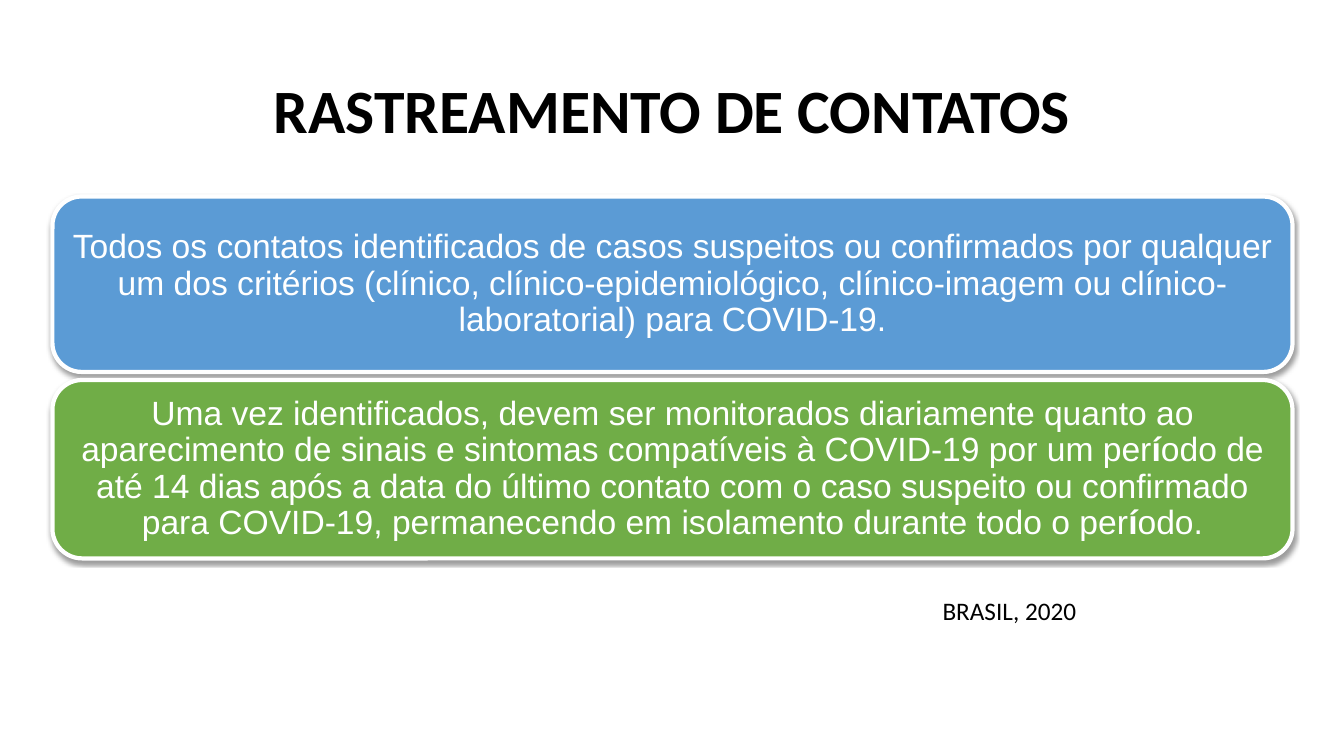
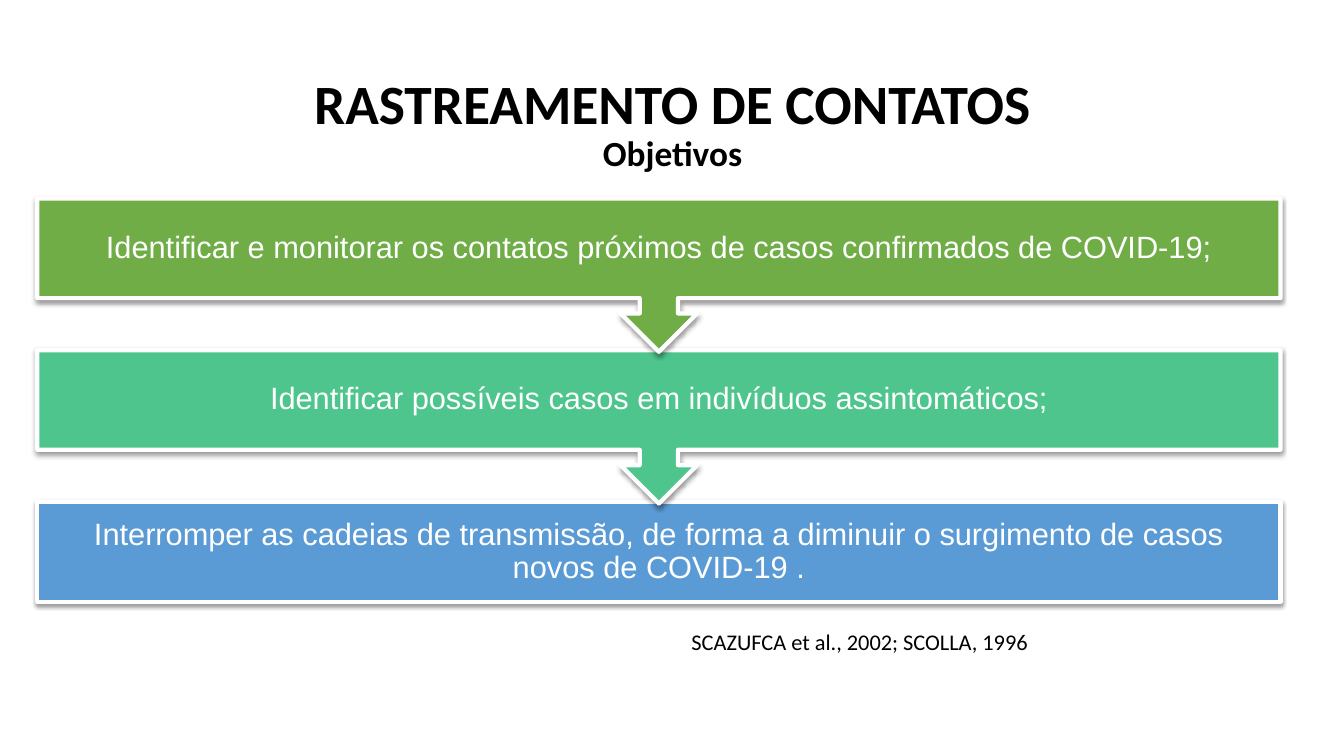
import pptx
import pptx.dml.color
import pptx.enum.shapes
import pptx.enum.text
import pptx.oxml
import pptx.oxml.ns
import pptx.util

Inches, Pt = pptx.util.Inches, pptx.util.Pt
SHAPE = pptx.enum.shapes.MSO_SHAPE
ALIGN = pptx.enum.text.PP_ALIGN
MIDDLE = pptx.enum.text.MSO_ANCHOR.MIDDLE

COLORS = {"black": "000000", "white": "FFFFFF", "blue": "5B9BD5",
          "green": "70AD47", "teal": "4DC58D"}
TITLE_FONT, BLOCK_FONT = "Calibri", "Arial"
LINE_SPACING = 0.9
HEADING = "RASTREAMENTO DE CONTATOS"

# A block's text is a list of (text, bold) runs.
CONTACT_BLOCKS = [
    ("blue", 1.95, 1.74, [
        ("Todos os contatos identificados de casos suspeitos ou confirmados por "
         "qualquer um dos critérios (clínico, clínico-epidemiológico, "
         "clínico-imagem ou clínico-laboratorial) para COVID-19.", False)]),
    ("green", 3.77, 1.77, [
        ("Uma vez identificados, devem ser monitorados diariamente quanto ao "
         "aparecimento de sinais e sintomas compatíveis à COVID-19 por um per", False),
        ("í", True),
        ("odo de até 14 dias após a data do último contato com o caso suspeito ou "
         "confirmado para COVID-19, permanecendo em isolamento durante todo o per", False),
        ("í", True),
        ("odo.", False)]),
]
OBJECTIVES = [
    ("green", "Identificar e monitorar os contatos próximos de casos confirmados de COVID-19;"),
    ("teal", "Identificar possíveis casos em indivíduos assintomáticos;"),
    ("blue", "Interromper as cadeias de transmissão, de forma a diminuir o surgimento "
             "de casos novos de COVID-19 ."),
]
OBJECTIVES_TOP, OBJECTIVES_PITCH = 1.97, 1.505
CALLOUT_HEIGHT, LAST_HEIGHT = 1.52, 0.99

SHADOW = (
    f'<a:outerShdw {pptx.oxml.ns.nsdecls("a")} blurRad="40000" dist="20000" '
    'dir="5400000" rotWithShape="0"><a:srgbClr val="000000">'
    '<a:alpha val="38000"/></a:srgbClr></a:outerShdw>')


def rgb(name):
    return pptx.dml.color.RGBColor.from_string(COLORS[name])


def set_font(paragraph, name, size, color):
    paragraph.font.name = name
    paragraph.font.size = Pt(size)
    paragraph.font.color.rgb = rgb(color)


def add_slide(presentation, top, lines):
    """Add a slide whose title holds the given (text, size) lines."""
    slide = presentation.slides.add_slide(presentation.slide_layouts[5])
    title = slide.shapes.title
    title.left, title.top = Inches(0.92), Inches(top)
    title.width, title.height = Inches(11.5), Inches(1.45)
    frame = title.text_frame
    frame.auto_size = pptx.enum.text.MSO_AUTO_SIZE.NONE
    frame.vertical_anchor = MIDDLE
    frame.text = "\n".join(text for text, _ in lines)
    for paragraph, (_, size) in zip(frame.paragraphs, lines):
        paragraph.alignment = ALIGN.CENTER
        paragraph.line_spacing = LINE_SPACING
        set_font(paragraph, TITLE_FONT, size, "black")
        paragraph.font.bold = True
    return slide


def add_block(slide, kind, box, color, runs, size, inset):
    """Add a filled, white-edged shape with a soft shadow and centred text."""
    shape = slide.shapes.add_shape(kind, *map(Inches, box))
    shape.fill.solid()
    shape.fill.fore_color.rgb = rgb(color)
    shape.line.color.rgb = rgb("white")
    shape.line.width = Pt(3)
    shape.shadow.inherit = False
    effects = shape.element.spPr.find(pptx.oxml.ns.qn("a:effectLst"))
    effects.append(pptx.oxml.parse_xml(SHADOW))
    frame = shape.text_frame
    frame.word_wrap = True
    frame.vertical_anchor = MIDDLE
    frame.margin_left = frame.margin_right = Inches(inset)
    frame.margin_top = frame.margin_bottom = Inches(inset)
    paragraph = frame.paragraphs[0]
    paragraph.alignment = ALIGN.CENTER
    paragraph.line_spacing = LINE_SPACING
    set_font(paragraph, BLOCK_FONT, size, "white")
    for text, bold in runs:
        run = paragraph.add_run()
        run.text = text
        if bold:
            run.font.bold = True


def add_citation(slide, box, text, size):
    frame = slide.shapes.add_textbox(*map(Inches, box)).text_frame
    frame.word_wrap = True
    frame.text = text
    set_font(frame.paragraphs[0], TITLE_FONT, size, "black")


def build_contacts(presentation):
    slide = add_slide(presentation, 0.4, [(HEADING, 44)])
    for color, top, height, runs in CONTACT_BLOCKS:
        add_block(slide, SHAPE.ROUNDED_RECTANGLE, (0.52, top, 12.3, height),
                  color, runs, 24, 0.1)
    add_citation(slide, (9.25, 5.86, 3, 0.4), "BRASIL, 2020", 18)


def build_objectives(presentation):
    slide = add_slide(presentation, 0.52, [(HEADING, 39.6), ("Objetivos", 25.2)])
    last = len(OBJECTIVES) - 1
    # Bottom to top, so that each arrow tip lies over the block below it.
    for index, (color, text) in reversed(list(enumerate(OBJECTIVES))):
        if index == last:
            kind, height = SHAPE.RECTANGLE, LAST_HEIGHT
        else:
            kind, height = SHAPE.DOWN_ARROW_CALLOUT, CALLOUT_HEIGHT
        top = OBJECTIVES_TOP + index * OBJECTIVES_PITCH
        add_block(slide, kind, (0.37, top, 12.33, height), color,
                  [(text, False)], 22, 0.17)
    add_citation(slide, (6.76, 6.18, 3.79, 0.37),
                 "SCAZUFCA et al., 2002; SCOLLA, 1996", 16)


def main():
    presentation = pptx.Presentation()
    presentation.slide_width = Inches(13.33)
    presentation.slide_height = Inches(7.5)
    build_contacts(presentation)
    build_objectives(presentation)
    presentation.save("out.pptx")


if __name__ == "__main__":
    main()
